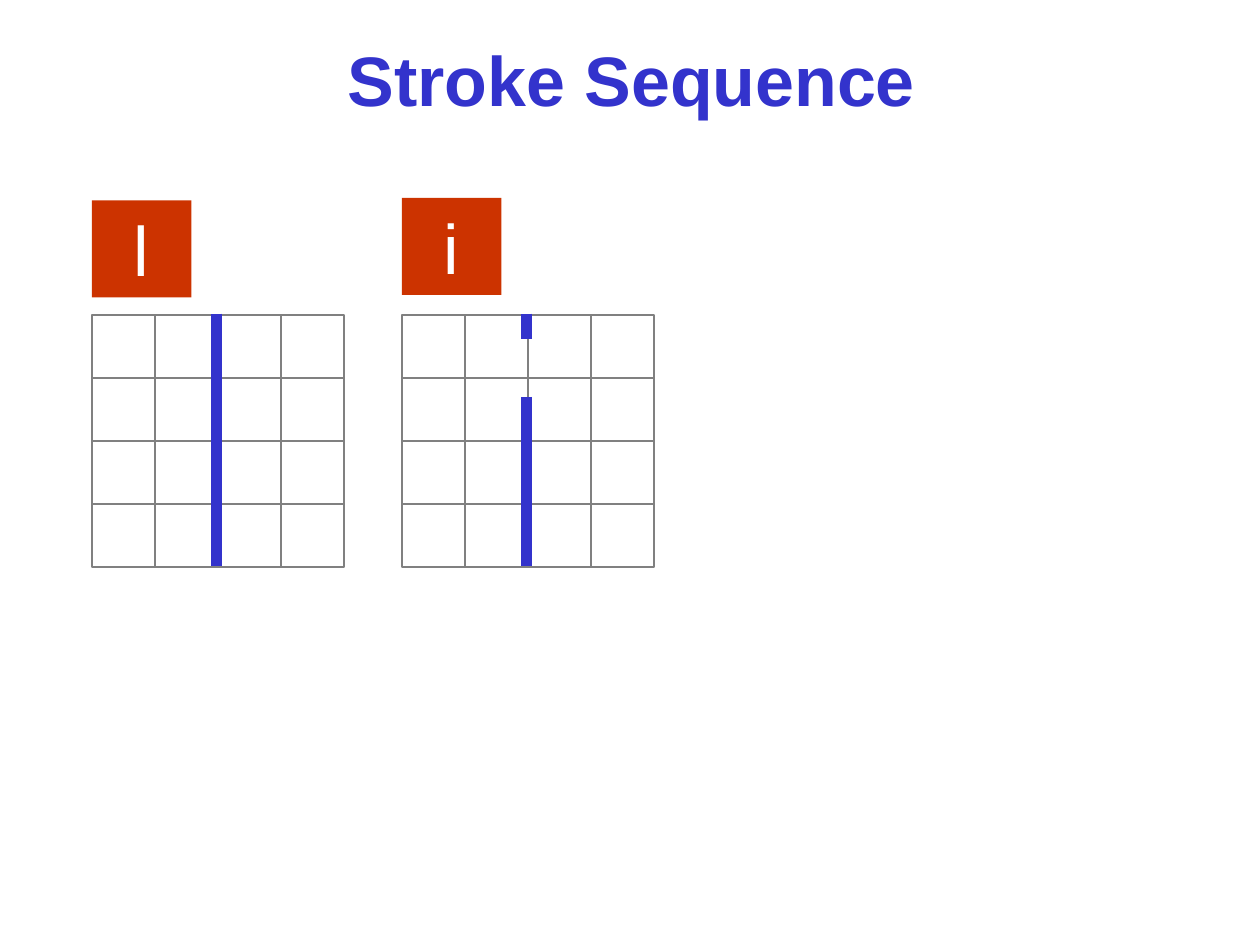
"""Build the stroke sequence slide for the letters l and i."""
from pptx import Presentation
from pptx.dml.color import RGBColor
from pptx.enum.shapes import MSO_CONNECTOR, MSO_SHAPE
from pptx.enum.text import MSO_ANCHOR, PP_ALIGN
from pptx.oxml.ns import qn
from pptx.util import Inches, Pt

RECT = MSO_SHAPE.RECTANGLE
LINE = MSO_CONNECTOR.STRAIGHT
MID = MSO_ANCHOR.MIDDLE
MIDDLE = PP_ALIGN.CENTER

BLUE, RED, GRAY, WHITE = "3333CC", "CC3300", "808080", "FFFFFF"
CELL, COUNT, TOP = 0.5, 4, 2.5
SIDE = CELL * COUNT
TITLE = {"size": Pt(40), "name": "Arial", "bold": True}
LETTER = {"size": Pt(40), "name": "Arial", "bold": False}
LETTERS = [
    ("l", 0.73, 1.59, [(0, 4)]),
    ("i", 3.19, 1.57, [(1.32, 4), (0, 0.4)]),
]


def paint(color, code):
    """Set a colour from a hex string."""
    color.rgb = RGBColor.from_string(code)


def write(shape, text, style, code):
    """Put one centred line of styled text in a shape."""
    frame = shape.text_frame
    frame.word_wrap = True
    frame.vertical_anchor = MID
    para = frame.paragraphs[0]
    para.alignment = MIDDLE
    run = para.add_run()
    run.text = text
    for key, value in style.items():
        setattr(run.font, key, value)
    paint(run.font.color, code)


def add_title(slide, text):
    """Add the slide title."""
    box = slide.shapes.add_textbox(*map(Inches, (0.76, 0, 8.5, 1.25)))
    write(box, text, TITLE, BLUE)


def add_box(shapes, left, top, width, height):
    """Add a rectangle without shadow."""
    box = shapes.add_shape(RECT, *map(Inches, (left, top, width, height)))
    box.shadow.inherit = False
    return box


def add_tile(slide, text, left, top):
    """Add the red tile that names a letter."""
    tile = add_box(slide.shapes, left, top, 0.79, 0.77)
    tile.fill.solid()
    paint(tile.fill.fore_color, RED)
    tile.line.fill.background()
    write(tile, text, LETTER, WHITE)


def add_line(shapes, start, end, code, width):
    """Draw a straight line between two points."""
    line = shapes.add_connector(LINE, *map(Inches, (*start, *end)))
    paint(line.line.color, code)
    line.line.width = Pt(width)
    props = line._element.spPr
    props.append(props.makeelement(qn("a:effectLst"), {}))


def add_grid(slide, left):
    """Draw a grouped square grid."""
    shapes = slide.shapes.add_group_shape().shapes
    frame = add_box(shapes, left, TOP, SIDE, SIDE)
    frame.fill.background()
    paint(frame.line.color, GRAY)
    frame.line.width = Pt(1)
    for step in range(1, COUNT):
        x, y = left + step * CELL, TOP + step * CELL
        add_line(shapes, (x, TOP), (x, TOP + SIDE), GRAY, 1)
        add_line(shapes, (left, y), (left + SIDE, y), GRAY, 1)


def add_stroke(slide, left, first, last):
    """Draw a stroke down the middle between two grid rows."""
    x, top = left + SIDE / 2 - 0.01, TOP - 0.01
    add_line(slide.shapes, (x, top + first * CELL),
             (x, top + last * CELL), BLUE, 6)


def main():
    """Build and save the slide."""
    deck = Presentation()
    deck.slide_width, deck.slide_height = Inches(10), Inches(7.5)
    slide = deck.slides.add_slide(deck.slide_layouts[6])
    add_title(slide, "Stroke Sequence")
    for text, left, top, strokes in LETTERS:
        add_tile(slide, text, left, top)
        add_grid(slide, left)
        for first, last in strokes:
            add_stroke(slide, left, first, last)
    deck.save("out.pptx")


if __name__ == "__main__":
    main()
